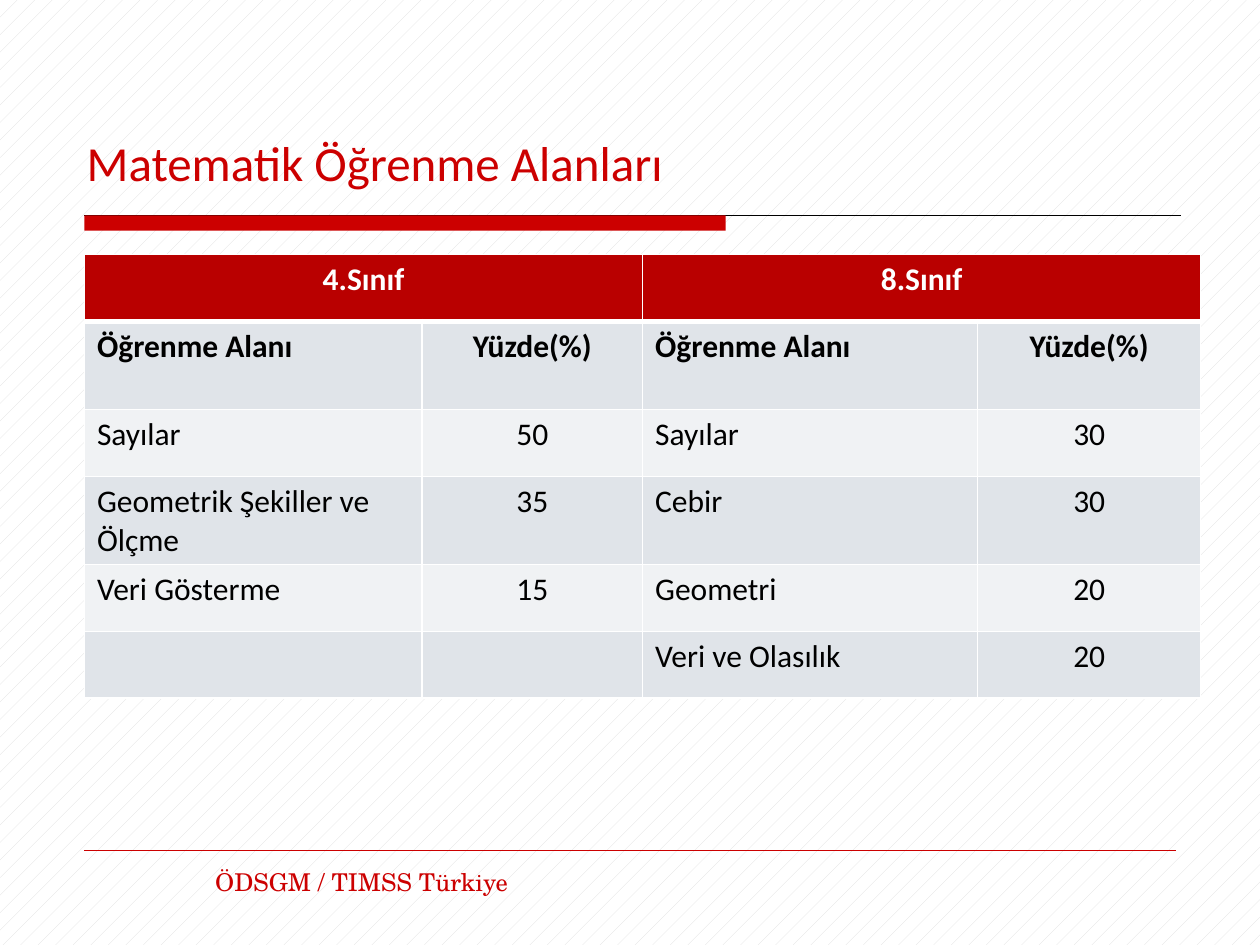
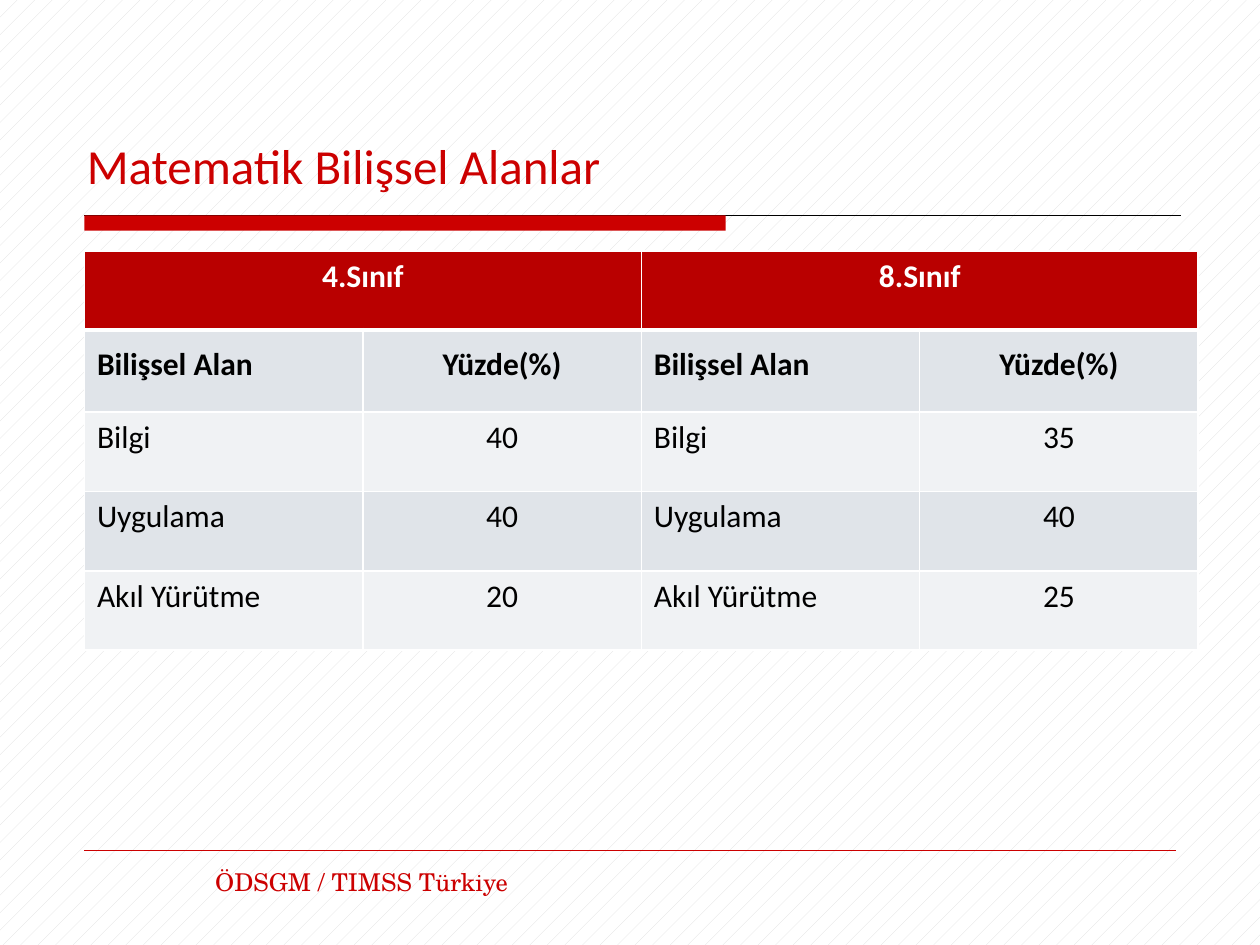
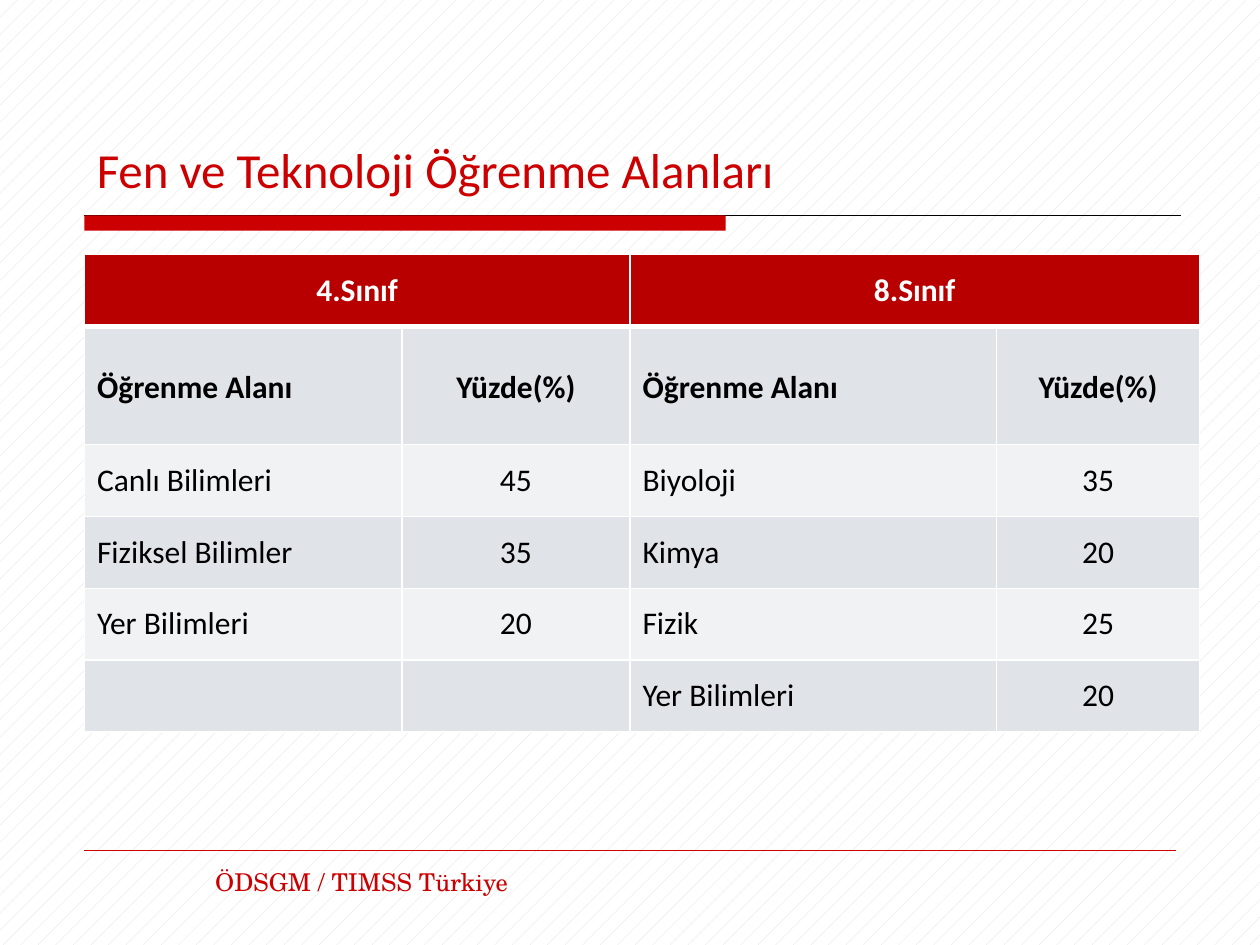
"""Build three slides on the content and cognitive domains of TIMSS."""
from dataclasses import dataclass

from pptx import Presentation
from pptx.dml.color import RGBColor as Rgb
from pptx.enum.dml import MSO_PATTERN as Pattern
from pptx.enum.shapes import MSO_CONNECTOR as Connector, MSO_SHAPE as Shape
from pptx.enum.text import MSO_ANCHOR as Anchor, PP_ALIGN as Align
from pptx.oxml import parse_xml
from pptx.oxml.ns import nsdecls
from pptx.util import Inches, Pt


@dataclass(frozen=True)
class Theme:
    """Colours, fonts and type sizes of the deck."""
    red: str = "CC0000"
    header: str = "B90000"
    bands: tuple = ("E0E4E9", "F0F2F4")
    white: str = "FFFFFF"
    black: str = "000000"
    hatch: str = "DDDDDD"
    body_font: str = "Calibri"
    footer_font: str = "TeX Gyre Schola"
    title_size: int = 28
    cell_size: int = 18
    footer_size: int = 14
    border: int = 1
    header_border: int = 3


THEME = Theme()
LEFT = 0.67
GRADES = ["4.Sınıf", "8.Sınıf"]
FOOTER = "ÖDSGM / TIMSS Türkiye"

SLIDES = [
    {
        "title": "Matematik Öğrenme Alanları",
        "title_box": (0.59, 0.78, 7.63, 0.79),
        "top": 2.02,
        "columns": [2.68, 1.75, 2.66, 1.77],
        "heights": [0.53, 0.7, 0.53, 0.7, 0.53, 0.53],
        "anchor": Anchor.TOP,
        "label_margins": (0.05, 0.05),
        "label": "Öğrenme Alanı",
        "domains": [
            ["Sayılar", "50", "Sayılar", "30"],
            ["Geometrik Şekiller ve Ölçme", "35", "Cebir", "30"],
            ["Veri Gösterme", "15", "Geometri", "20"],
            ["", "", "Veri ve Olasılık", "20"],
        ],
    },
    {
        "title": "Matematik Bilişsel Alanlar",
        "title_box": (0.59, 0.94, 7.55, 0.65),
        "top": 1.99,
        "columns": [2.21] * 4,
        "heights": [0.63, 0.65, 0.63, 0.63, 0.63],
        "anchor": Anchor.TOP,
        "label_margins": (0.12, 0),
        "label": "Bilişsel Alan",
        "domains": [
            ["Bilgi", "40", "Bilgi", "35"],
            ["Uygulama", "40", "Uygulama", "40"],
            ["Akıl Yürütme", "20", "Akıl Yürütme", "25"],
        ],
    },
    {
        "title": "Fen ve Teknoloji Öğrenme Alanları",
        "title_box": (0.67, 0.99, 8.83, 0.63),
        "top": 2.02,
        "columns": [2.52, 1.81, 2.91, 1.61],
        "heights": [0.57, 0.94, 0.57, 0.57, 0.57, 0.57],
        "anchor": Anchor.MIDDLE,
        "label_margins": (0.04, 0),
        "label": "Öğrenme Alanı",
        "domains": [
            ["Canlı Bilimleri", "45", "Biyoloji", "35"],
            ["Fiziksel Bilimler", "35", "Kimya", "20"],
            ["Yer Bilimleri", "20", "Fizik", "25"],
            ["", "", "Yer Bilimleri", "20"],
        ],
    },
]


def apply_format(target, values):
    """Set each named attribute of the target."""
    for name, value in values.items():
        setattr(target, name, value)


def fill_solid(fill, color):
    """Fill with one colour."""
    fill.solid()
    fill.fore_color.rgb = Rgb.from_string(color)


def write(paragraph, text, color, font_values):
    """Add one formatted run to a paragraph."""
    run = paragraph.add_run()
    run.text = text
    apply_format(run.font, font_values)
    run.font.color.rgb = Rgb.from_string(color)


def add_text(slide, box, text, font_values, anchor=Anchor.TOP):
    """Add a wrapped line of red text."""
    frame = slide.shapes.add_textbox(*map(Inches, box)).text_frame
    apply_format(frame, {"word_wrap": True, "vertical_anchor": anchor})
    write(frame.paragraphs[0], text, THEME.red, font_values)


def add_rule(slide, right, y, color, width):
    """Draw a horizontal rule from the left margin."""
    rule = slide.shapes.add_connector(
        Connector.STRAIGHT, Inches(LEFT), Inches(y), Inches(right), Inches(y))
    rule.line.color.rgb = Rgb.from_string(color)
    rule.line.width = Pt(width)
    properties = rule._element.spPr
    properties.append(parse_xml(f"<a:effectLst {nsdecls('a')}/>"))


def add_title_band(slide):
    """Draw the red band and thin rule below the title."""
    add_rule(slide, 9.37, 1.71, THEME.black, 0.75)
    band = slide.shapes.add_shape(
        Shape.RECTANGLE, *map(Inches, (LEFT, 1.71, 5.09, 0.12)))
    band.shadow.inherit = False
    fill_solid(band.fill, THEME.red)
    band.line.fill.background()


def add_footer(slide):
    """Draw the footer rule and its text."""
    add_rule(slide, 9.33, 6.75, THEME.red, 0.25)
    add_text(slide, (1.61, 6.83, 6.2, 0.52), FOOTER,
             {"name": THEME.footer_font, "size": Pt(THEME.footer_size)})


def set_borders(cell, top, bottom):
    """Give a cell white borders."""
    sides = {"L": THEME.border, "R": THEME.border, "T": top, "B": bottom}
    properties = cell._tc.get_or_add_tcPr()
    for side, width in sides.items():
        properties.append(parse_xml(
            f'<a:ln{side} {nsdecls("a")} w="{Pt(width)}"><a:solidFill>'
            f'<a:srgbClr val="{THEME.white}"/></a:solidFill></a:ln{side}>'))


def format_cell(cell, row, column, text, content):
    """Style one cell by its place in the table and write its text."""
    is_header = row == 0
    set_borders(cell,
                THEME.header_border if row == 1 else THEME.border,
                THEME.header_border if is_header else THEME.border)
    fill_solid(cell.fill, THEME.header if is_header else THEME.bands[(row - 1) % 2])
    top, bottom = content["label_margins"] if row == 1 else (0.05, 0.05)
    apply_format(cell, {
        "margin_left": Inches(0.1), "margin_right": Inches(0.1),
        "margin_top": Inches(top), "margin_bottom": Inches(bottom),
        "vertical_anchor": content["anchor"]})
    if text:
        paragraph = cell.text_frame.paragraphs[0]
        paragraph.alignment = Align.CENTER if is_header or column % 2 else Align.LEFT
        write(paragraph, text, THEME.white if is_header else THEME.black,
              {"name": THEME.body_font, "size": Pt(THEME.cell_size), "bold": row < 2})


def add_domain_table(slide, content):
    """Add the table of domains and percentages for both grades."""
    columns, heights = content["columns"], content["heights"]
    rows = [[GRADES[0], "", GRADES[1], ""],
            [content["label"], "Yüzde(%)"] * 2,
            *content["domains"]]
    table = slide.shapes.add_table(
        len(rows), len(columns), Inches(LEFT), Inches(content["top"]),
        Inches(sum(columns)), Inches(sum(heights))).table
    table.horz_banding = False
    for column, width in zip(table.columns, columns):
        column.width = Inches(width)
    for row, height in zip(table.rows, heights):
        row.height = Inches(height)
    for first in (0, 2):
        table.cell(0, first).merge(table.cell(0, first + 1))
    for row, texts in enumerate(rows):
        for column, text in enumerate(texts):
            format_cell(table.cell(row, column), row, column, text, content)


def set_background(slide):
    """Give a slide the light pattern."""
    fill = slide.background.fill
    fill.patterned()
    fill.pattern = Pattern.PERCENT_5
    fill.fore_color.rgb = Rgb.from_string(THEME.hatch)
    fill.back_color.rgb = Rgb.from_string(THEME.white)


def add_domain_slide(deck, content):
    """Add one complete slide."""
    slide = deck.slides.add_slide(deck.slide_layouts[6])
    set_background(slide)
    add_title_band(slide)
    add_text(slide, content["title_box"], content["title"],
             {"name": THEME.body_font, "size": Pt(THEME.title_size)}, Anchor.BOTTOM)
    add_domain_table(slide, content)
    add_footer(slide)


def main():
    """Build and save the deck."""
    deck = Presentation()
    apply_format(deck, {"slide_width": Inches(10), "slide_height": Inches(7.5)})
    for content in SLIDES:
        add_domain_slide(deck, content)
    deck.save("out.pptx")


if __name__ == "__main__":
    main()
